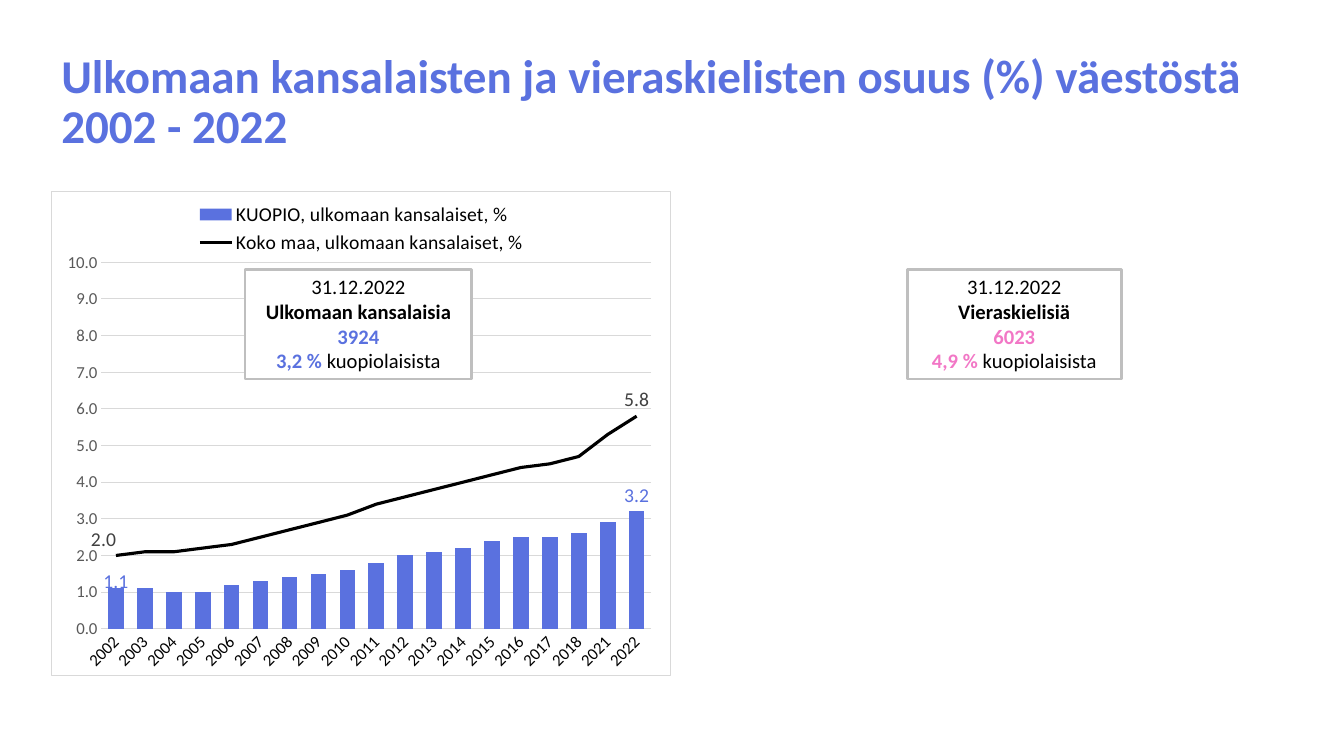
from dataclasses import dataclass

from lxml import etree
from pptx import Presentation
from pptx.chart.chart import Chart
from pptx.chart.data import CategoryChartData
from pptx.dml.color import RGBColor
from pptx.enum.chart import (XL_CHART_TYPE, XL_LABEL_POSITION, XL_LEGEND_POSITION,
                             XL_MARKER_STYLE, XL_TICK_MARK)
from pptx.enum.shapes import MSO_SHAPE
from pptx.enum.text import MSO_ANCHOR, PP_ALIGN
from pptx.oxml import parse_xml
from pptx.oxml.ns import nsdecls, qn
from pptx.util import Inches, Pt

COLUMN = XL_CHART_TYPE.COLUMN_CLUSTERED
OUTSIDE, ABOVE = XL_LABEL_POSITION.OUTSIDE_END, XL_LABEL_POSITION.ABOVE
LEGEND_TOP = XL_LEGEND_POSITION.TOP
NO_MARKER, NO_TICK = XL_MARKER_STYLE.NONE, XL_TICK_MARK.NONE
RECTANGLE = MSO_SHAPE.RECTANGLE
TOP, MIDDLE = MSO_ANCHOR.TOP, MSO_ANCHOR.MIDDLE
CENTER = PP_ALIGN.CENTER

FONT = "Calibri"
COLORS = {"blue": "5A71DF", "pink": "F277C6", "black": "000000", "white": "FFFFFF",
          "label": "404040", "axis": "595959", "grid": "D9D9D9", "border": "BFBFBF"}

YEARS = [str(year) for year in range(2002, 2019)] + ["2021", "2022"]
KUOPIO = [1.1, 1.1, 1, 1, 1.2, 1.3, 1.4, 1.5, 1.6, 1.8, 2, 2.1, 2.2, 2.4, 2.5, 2.5, 2.6, 2.9, 3.2]
FINLAND = [2, 2.1, 2.1, 2.2, 2.3, 2.5, 2.7, 2.9, 3.1, 3.4, 3.6, 3.8, 4, 4.2, 4.4, 4.5, 4.7, 5.3, 5.8]
YEARS.remove("2018")
YEARS.insert(-2, "2018")


@dataclass
class Callout:
    left: float
    width: float
    heading: str
    count: str
    share: str
    color: str


CALLOUTS = [
    Callout(2.43, 2.25, "Ulkomaan kansalaisia", "3924", "3,2 %", "blue"),
    Callout(9, 2.12, "Vieraskielisiä", "6023", "4,9 %", "pink"),
]


def rgb(name: str) -> RGBColor:
    return RGBColor.from_string(COLORS[name])


def style_font(font, size: float, color: str, bold: bool = False) -> None:
    font.name, font.size, font.bold = FONT, Pt(size), bold
    font.color.rgb = rgb(color)


def style_line(line, color: str, width: float) -> None:
    line.color.rgb = rgb(color)
    line.width = Pt(width)


def add_run(p, text: str, size: float, color: str, bold: bool = False) -> None:
    r = p.add_run()
    r.text = text
    style_font(r.font, size, color, bold)


def add_title(slide, text: str) -> None:
    box = slide.shapes.add_textbox(Inches(0.51), Inches(0.42), Inches(12.12), Inches(1.21))
    tf = box.text_frame
    tf.word_wrap = True
    tf.vertical_anchor = MIDDLE
    p = tf.paragraphs[0]
    p.line_spacing = 0.9
    add_run(p, text, 33.6, "blue", True)


def add_callout(slide, callout: Callout) -> None:
    sp = slide.shapes.add_shape(RECTANGLE, Inches(callout.left), Inches(2.67),
                                Inches(callout.width), Inches(1.09))
    sp.shadow.inherit = False
    sp.fill.solid()
    sp.fill.fore_color.rgb = rgb("white")
    style_line(sp.line, "border", 2)
    tf = sp.text_frame
    tf.word_wrap = True
    tf.vertical_anchor = TOP
    lines = [
        [("31.12.2022", "black", False)],
        [(callout.heading, "black", True)],
        [(callout.count, callout.color, True)],
        [(callout.share + " ", callout.color, True), ("kuopiolaisista", "black", False)],
    ]
    for i, line in enumerate(lines):
        p = tf.add_paragraph() if i else tf.paragraphs[0]
        p.alignment = CENTER
        for text, color, bold in line:
            add_run(p, text, 14.7, color, bold)


def manual_layout(x: float, y: float, inner: str = ""):
    return parse_xml(f'<c:layout {nsdecls("c")}><c:manualLayout>{inner}'
                     f'<c:x val="{x}"/><c:y val="{y}"/></c:manualLayout></c:layout>')


def move_last_series_to_line(chart: Chart) -> None:
    """Draw the last column series as a line on the same axes."""
    bar = chart.plots[0]._element
    ser = bar.findall(qn("c:ser"))[-1]
    for flag in ser.findall(qn("c:invertIfNegative")):
        ser.remove(flag)
    line = parse_xml(f'<c:lineChart {nsdecls("c")}><c:grouping val="standard"/>'
                     '<c:varyColors val="0"/><c:marker val="1"/></c:lineChart>')
    line.insert(2, ser)
    for axis_id in bar.findall(qn("c:axId")):
        etree.SubElement(line, qn("c:axId")).set("val", axis_id.get("val"))
    bar.addnext(line)


def label_ends(series, position, color: str, shift: tuple[float, float]) -> None:
    """Label the first and last year, and nudge the first label."""
    series.data_labels.show_value = False
    for index in (0, len(YEARS) - 1):
        label = series.points[index].data_label
        style_font(label.font, 14, color)
        label.position = position
    first = series._element.find(f'{qn("c:dLbls")}/{qn("c:dLbl")}')
    first.find(qn("c:idx")).addnext(manual_layout(*shift))


def frame_chart(chart: Chart) -> None:
    """Fix the plot area and give the chart a white ground and thin border."""
    area = chart._chartSpace.chart.plotArea
    for layout in area.findall(qn("c:layout")):
        area.remove(layout)
    layout = manual_layout(0.08, 0.147, '<c:layoutTarget val="inner"/>'
                           '<c:xMode val="edge"/><c:yMode val="edge"/>')
    for side, size in (("w", 0.888), ("h", 0.756)):
        etree.SubElement(layout[0], qn(f"c:{side}")).set("val", str(size))
    area.insert(0, layout)
    chart._chartSpace.chart.addnext(parse_xml(
        f'<c:spPr {nsdecls("c", "a")}>'
        f'<a:solidFill><a:srgbClr val="{COLORS["white"]}"/></a:solidFill>'
        f'<a:ln w="{Pt(0.75)}"><a:solidFill><a:srgbClr val="{COLORS["grid"]}"/>'
        '</a:solidFill></a:ln></c:spPr>'))


def style_axes(chart: Chart) -> None:
    years, percent = chart.category_axis, chart.value_axis
    for axis, color in ((years, "black"), (percent, "axis")):
        axis.major_tick_mark = axis.minor_tick_mark = NO_TICK
        style_font(axis.tick_labels.font, 12, color)
    style_line(years.format.line, "grid", 0.75)
    years._element.find(f'{qn("c:txPr")}/{qn("a:bodyPr")}').set("rot", "-2700000")
    percent.minimum_scale, percent.maximum_scale, percent.major_unit = 0, 10, 1
    percent.tick_labels.number_format = "#,##0.0"
    percent.tick_labels.number_format_is_linked = False
    percent.format.line.fill.background()
    style_line(percent.major_gridlines.format.line, "grid", 0.75)


def add_share_chart(slide) -> None:
    data = CategoryChartData(number_format="#,##0.0")
    data.categories = YEARS
    data.add_series("KUOPIO, ulkomaan kansalaiset, %", KUOPIO)
    data.add_series("Koko maa, ulkomaan kansalaiset, %", FINLAND)
    chart = slide.shapes.add_chart(COLUMN, Inches(0.51), Inches(1.89), Inches(6.15),
                                   Inches(4.82), data).chart
    chart.has_title = False
    style_font(chart.font, 14, "black")
    chart.has_legend = True
    chart.legend.position = LEGEND_TOP
    chart.legend.include_in_layout = True
    style_font(chart.legend.font, 14, "black")
    style_axes(chart)
    move_last_series_to_line(chart)
    columns, line = chart.plots
    columns.gap_width = 85
    columns.vary_by_categories = False
    kuopio, finland = columns.series[0], line.series[0]
    kuopio.format.fill.solid()
    kuopio.format.fill.fore_color.rgb = rgb("blue")
    style_line(finland.format.line, "black", 2.25)
    finland.marker.style = NO_MARKER
    finland.smooth = False
    label_ends(kuopio, OUTSIDE, "blue", (0, 0.02))
    label_ends(finland, ABOVE, "label", (-0.02, 0))
    frame_chart(chart)


def main() -> None:
    prs = Presentation()
    prs.slide_width, prs.slide_height = Inches(13.33), Inches(7.5)
    slide = prs.slides.add_slide(prs.slide_layouts[6])
    add_share_chart(slide)
    add_title(slide, "Ulkomaan kansalaisten ja vieraskielisten osuus (%) väestöstä 2002 - 2022")
    for callout in CALLOUTS:
        add_callout(slide, callout)
    prs.save("out.pptx")


if __name__ == "__main__":
    main()
